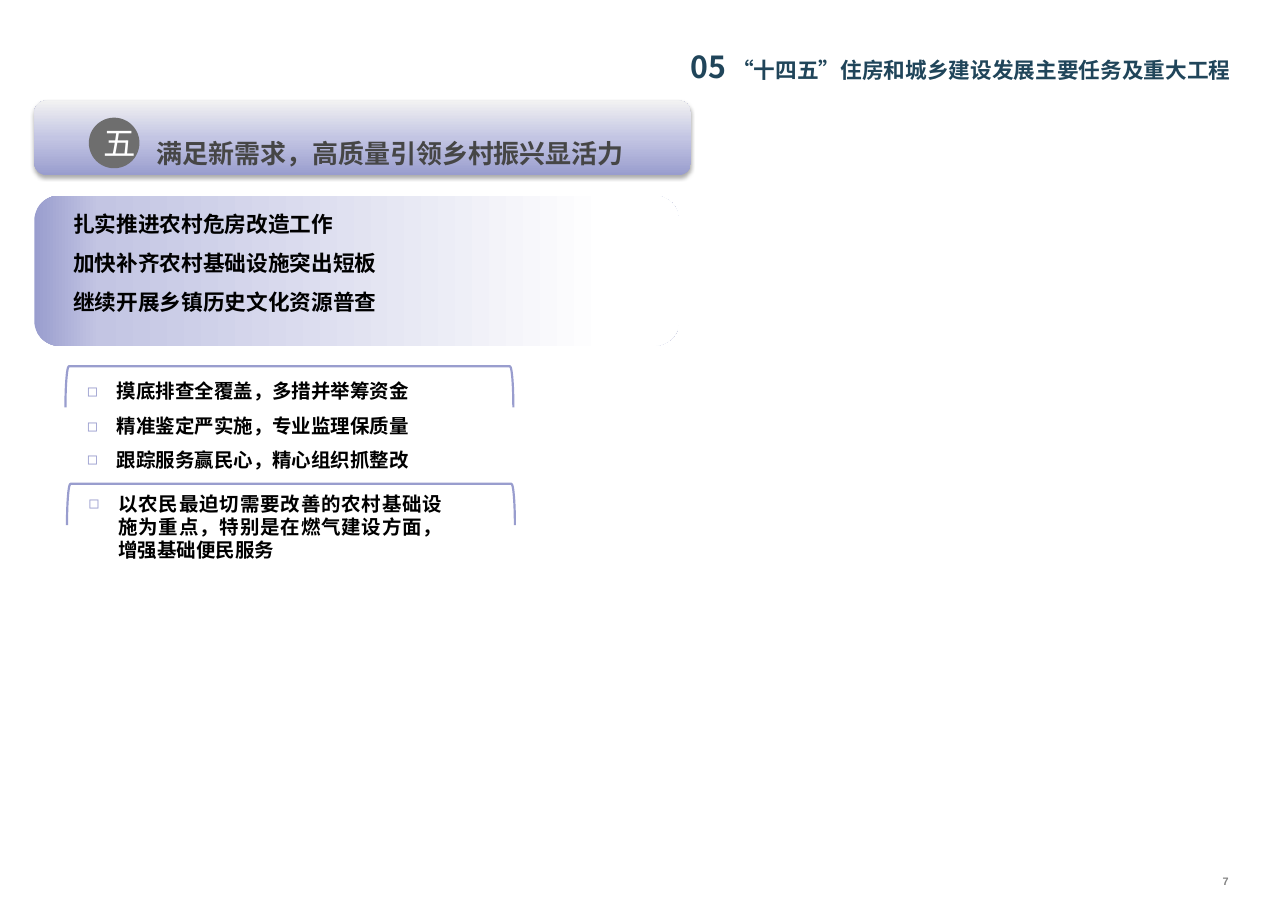
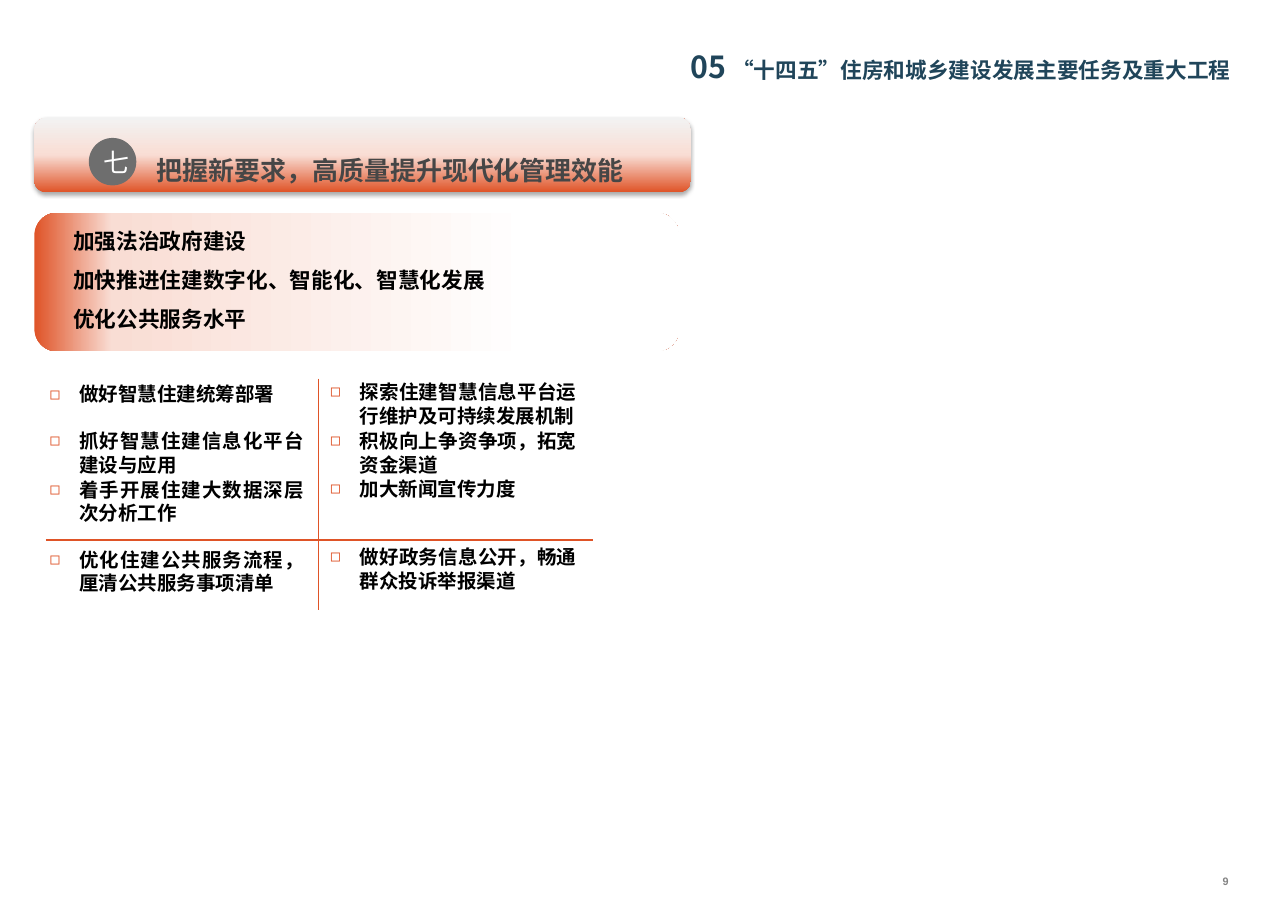
import copy

import lxml.etree
import pptx
import pptx.dml.color
import pptx.enum.shapes
import pptx.enum.text
import pptx.oxml.ns
import pptx.util

RGB = pptx.dml.color.RGBColor
SHAPE = pptx.enum.shapes.MSO_SHAPE
ALIGN = pptx.enum.text.PP_ALIGN
ANCHOR = pptx.enum.text.MSO_ANCHOR
qn = pptx.oxml.ns.qn

EMU_PER_PX = 9144
A3_WIDTH, A3_HEIGHT = pptx.util.Emu(15119350), pptx.util.Emu(10691813)
CJK, LATIN, FOOTER = "Noto Sans CJK SC", "Calibri", "Arial"

BLACK = RGB(0x00, 0x00, 0x00)
WHITE = RGB(0xFF, 0xFF, 0xFF)
NAVY = RGB(0x20, 0x45, 0x5A)
DARK = RGB(0x46, 0x46, 0x46)
GREY = RGB(0x6E, 0x6E, 0x6E)
MID_GREY = RGB(0x83, 0x83, 0x83)
PALE = RGB(0xF2, 0xF2, 0xF2)
LILAC = RGB(0x99, 0x9D, 0xCE)
LIGHT_LILAC = RGB(0xC3, 0xC5, 0xE3)
ORANGE = RGB(0xDF, 0x53, 0x27)
LIGHT_ORANGE = RGB(0xF9, 0xDD, 0xD4)

TITLE = "“十四五”住房和城乡建设发展主要任务及重大工程"


def px(n):
    return pptx.util.Emu(n * EMU_PER_PX)


def sub(parent, tag, **attrs):
    return lxml.etree.SubElement(parent, qn(tag), attrs)


class Deck:
    def __init__(self):
        self.prs = pptx.Presentation()
        self.prs.slide_width, self.prs.slide_height = A3_WIDTH, A3_HEIGHT
        self.s = None
        self.accent = self.tint = None

    def new_slide(self, number, accent, tint):
        self.s = self.prs.slides.add_slide(self.prs.slide_layouts[6])
        self.accent, self.tint = accent, tint
        self.page_number(number)
        self.title()

    def style(self, r, size, color, font=CJK, bold=True):
        r.font.size = pptx.util.Pt(size)
        r.font.bold = bold
        r.font.name = font
        r.font.color.rgb = color
        sub(r.font._element, "a:ea", typeface=CJK)

    def text(self, box, lines, size, color, font=CJK, align=ALIGN.JUSTIFY, grow=True):
        sp = self.s.shapes.add_textbox(*map(px, box))
        tf = sp.text_frame
        tf.word_wrap = True
        tf.text = "\n".join(lines)
        if grow:
            tf.auto_size = pptx.enum.text.MSO_AUTO_SIZE.SHAPE_TO_FIT_TEXT
        for p in tf.paragraphs:
            p.alignment = align
            for r in p.runs:
                self.style(r, size, color, font)
        return tf

    def page_number(self, number):
        tf = self.text((1491, 1106, 165, 49), [str(number)], 10, MID_GREY, FOOTER,
                       ALIGN.CENTER, grow=False)
        tf.vertical_anchor = ANCHOR.MIDDLE

    def title(self):
        tf = self.text((59, 50, 1537, 50), ["05"], 28, NAVY, align=ALIGN.RIGHT, grow=False)
        tf.margin_left = tf.margin_right = px(16)
        tf.margin_top = tf.margin_bottom = 0
        p = tf.paragraphs[0]
        p.line_spacing = 1.25
        for content, size in ((" ", 24), (TITLE, 20)):
            r = p.add_run()
            r.text = content
            self.style(r, size, NAVY)

    def shape(self, kind, box):
        sp = self.s.shapes.add_shape(kind, *map(px, box))
        sp.shadow.inherit = False
        sp.line.fill.background()
        return sp

    def gradient(self, box, stops, angle):
        sp = self.shape(SHAPE.ROUNDED_RECTANGLE, box)
        sp.fill.gradient()
        sp.fill.gradient_angle = angle
        gs_list = next(sp.element.spPr.iter(qn("a:gsLst")))
        gs_list.append(copy.deepcopy(gs_list[0]))
        for stop, (position, color) in zip(sp.fill.gradient_stops, stops):
            stop.position = position
            stop.color.rgb = color
        return sp

    def banner(self, top, heading):
        stops = (0, self.accent), (0.5, self.tint), (1, PALE)
        sp = self.gradient((44, top, 843, 96), stops, 90)
        effects = sp.element.spPr.find(qn("a:effectLst"))
        shadow = sub(effects, "a:outerShdw", blurRad="44450", dist="27940",
                     dir="5400000", algn="ctr", rotWithShape="0")
        sub(sub(shadow, "a:srgbClr", val=str(BLACK)), "a:alpha", val="32000")
        tf = self.text((191, top + 14, 667, 68), [heading], 24, DARK)
        p = tf.paragraphs[0]
        p.line_spacing = 1.72
        p.space_before = p.space_after = pptx.util.Pt(10)

    def badge(self, top, diameter, numeral, size):
        sp = self.shape(SHAPE.OVAL, (114, top, diameter, diameter))
        sp.fill.solid()
        sp.fill.fore_color.rgb = GREY
        tf = sp.text_frame
        tf.text = numeral
        tf.vertical_anchor = ANCHOR.MIDDLE
        tf.paragraphs[0].alignment = ALIGN.CENTER
        self.style(tf.paragraphs[0].runs[0], size, WHITE, LATIN, bold=False)

    def panel(self, top, height, tint_at, white_at, lines):
        stops = (0, self.accent), (tint_at, self.tint), (white_at, WHITE)
        self.gradient((44, top, 828, height), stops, 0)
        tf = self.text((84, top - 2, 803, 154), lines, 20, BLACK)
        for p in tf.paragraphs:
            p.line_spacing = 1.5

    def bracket(self, left, top):
        sp = self.shape(SHAPE.LEFT_BRACKET, (left, top, 53, 575))
        sp.rotation = 90
        sp.fill.background()
        sp.line.color.rgb = self.accent
        sp.line.width = pptx.util.Pt(2)

    def bullet(self, left, top, width, height, content):
        tf = self.text((left, top, width, height), [content], 18, BLACK, LATIN)
        pPr = tf.paragraphs[0]._p.get_or_add_pPr()
        pPr.set("marL", str(px(38)))
        pPr.set("indent", str(px(-38)))
        sub(sub(pPr, "a:buClr"), "a:srgbClr", val=str(self.accent))
        sub(pPr, "a:buSzPct", val="90000")
        sub(pPr, "a:buFont", typeface=LATIN)
        sub(pPr, "a:buChar", char="◻")

    def line(self, x1, y1, x2, y2):
        kind = pptx.enum.shapes.MSO_CONNECTOR.STRAIGHT
        c = self.s.shapes.add_connector(kind, *map(px, (x1, y1, x2, y2)))
        c.line.color.rgb = self.accent
        c.line.width = pptx.util.Pt(1.25)
        sub(c._element.spPr, "a:effectLst")


def rural_slide(deck):
    deck.new_slide(7, LILAC, LIGHT_LILAC)
    deck.banner(129, "满足新需求，高质量引领乡村振兴显活力")
    deck.badge(151, 65, "五", 30)
    deck.panel(251, 193, 0.1, 0.89, [
        "扎实推进农村危房改造工作",
        "加快补齐农村基础设施突出短板",
        "继续开展乡镇历史文化资源普查",
    ])
    deck.bracket(345, 209)
    deck.bracket(347, 360)
    for left, top, height, content in (
        (102, 482, 40, "摸底排查全覆盖，多措并举筹资金"),
        (102, 527, 40, "精准鉴定严实施，专业监理保质量"),
        (102, 570, 40, "跟踪服务赢民心，精心组织抓整改"),
        (104, 626, 101, "以农民最迫切需要改善的农村基础设施为重点，"
                        "特别是在燃气建设方面，增强基础便民服务"),
    ):
        deck.bullet(left, top, 474, height, content)


def governance_slide(deck):
    deck.new_slide(9, ORANGE, LIGHT_ORANGE)
    deck.banner(151, "把握新要求，高质量提升现代化管理效能")
    deck.badge(177, 61, "七", 24)
    deck.panel(273, 178, 0.12, 0.77, [
        "加强法治政府建设",
        "加快推进住建数字化、智能化、智慧化发展",
        "优化公共服务水平",
    ])
    deck.line(59, 693, 761, 693)
    deck.line(409, 486, 409, 783)
    columns = (
        (54, 346, (
            (486, 40, "做好智慧住建统筹部署"),
            (546, 71, "抓好智慧住建信息化平台建设与应用"),
            (608, 71, "着手开展住建大数据深层次分析工作"),
            (698, 71, "优化住建公共服务流程，厘清公共服务事项清单"),
        )),
        (414, 336, (
            (483, 71, "探索住建智慧信息平台运行维护及可持续发展机制"),
            (546, 71, "积极向上争资争项，拓宽资金渠道"),
            (607, 40, "加大新闻宣传力度"),
            (695, 71, "做好政务信息公开，畅通群众投诉举报渠道"),
        )),
    )
    for left, width, items in columns:
        for top, height, content in items:
            deck.bullet(left, top, width, height, content)


def main():
    deck = Deck()
    rural_slide(deck)
    governance_slide(deck)
    deck.prs.save("out.pptx")


if __name__ == "__main__":
    main()
